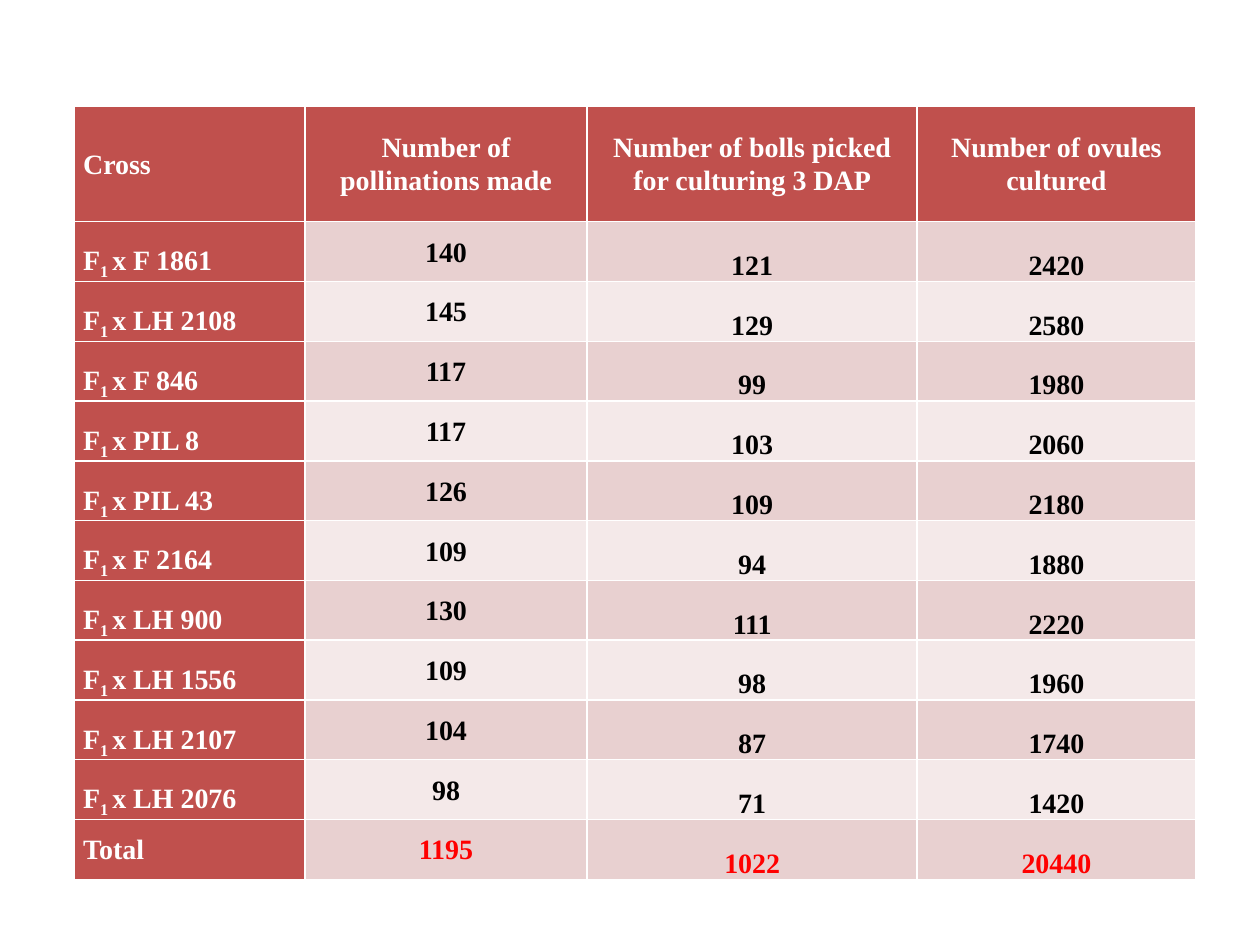
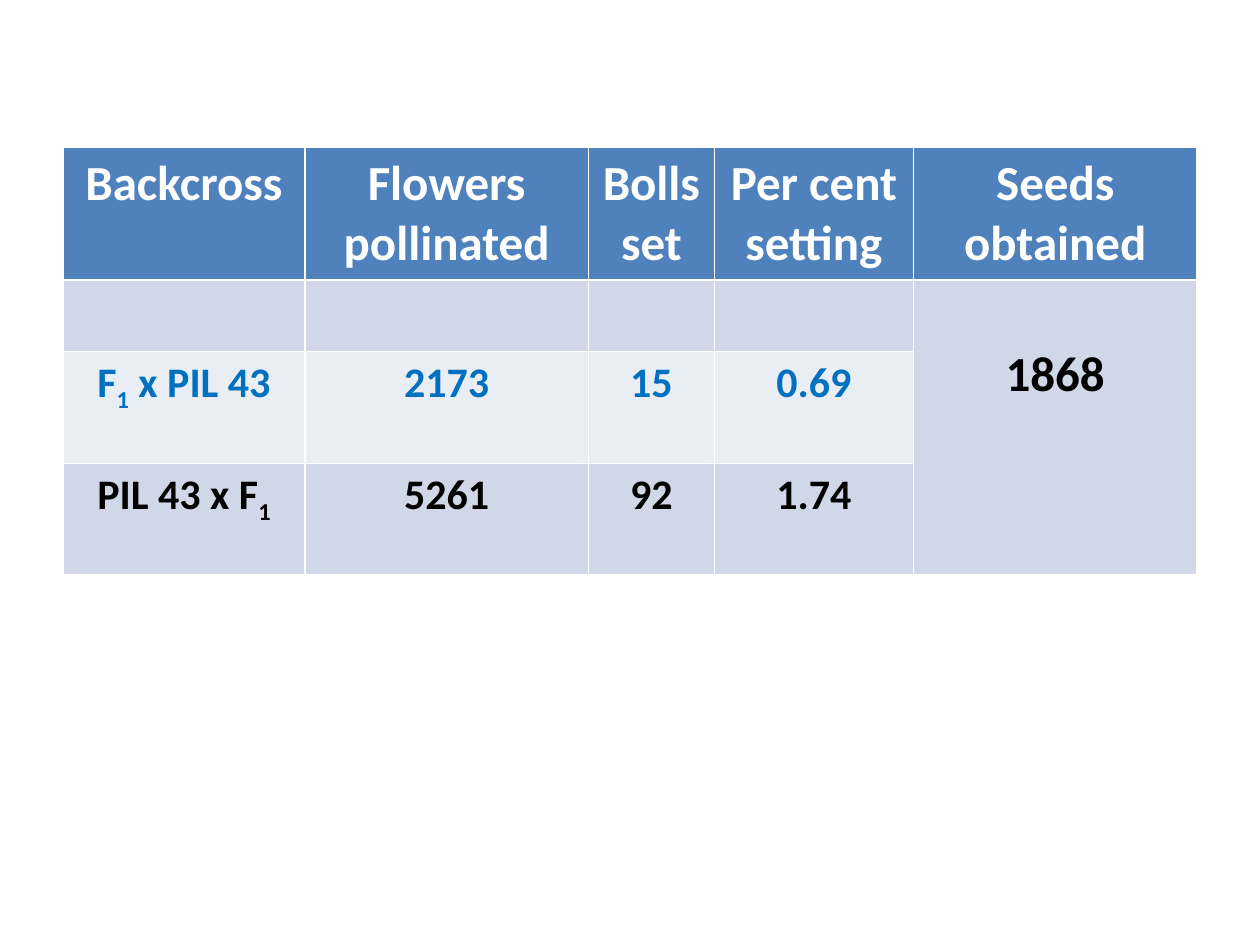
"""Build two slides of cotton crossing results as formatted tables."""
from dataclasses import dataclass
from typing import Any, Callable

from lxml.etree import SubElement
from pptx import Presentation
from pptx.dml.color import RGBColor
from pptx.enum.text import MSO_VERTICAL_ANCHOR as Anchor, PP_PARAGRAPH_ALIGNMENT as Align
from pptx.oxml.ns import qn
from pptx.util import Inches, Pt

COLORS = {
    "white": "FFFFFF", "black": "000000", "red": "FF0000", "sky": "0070C0",
    "brick": "C0504D", "brick_dark": "E8D0D0", "brick_light": "F4E9E9",
    "blue": "4F81BD", "blue_dark": "D0D8E8", "blue_light": "E9EDF4",
}
SUBSCRIPT_MARK = "~"
PLAIN_TABLE = {"first_row": True, "horz_banding": False}


@dataclass(frozen=True)
class CellLook:
    """Text colour, size and placement of one cell."""
    color: str
    size: int
    align: Align = Align.CENTER
    anchor: Anchor = Anchor.TOP
    margin_top: float = 0.05


@dataclass(frozen=True)
class ResultTable:
    """Content, geometry and style of one slide's table."""
    left: float
    top: float
    columns: list[float]
    row_heights: list[float]
    rows: list[list[str]]
    palette: str
    font: str
    look: Callable[[int, int], CellLook]
    side_margin: float = 0.1
    bottom_margin: float = 0.05
    line_spacing: float = 1.0
    accent_first_column: bool = False
    merge: tuple[int, int, int, int] | None = None


def set_all(target: Any, values: dict[str, Any]) -> None:
    """Set every attribute named in values."""
    for name, value in values.items():
        setattr(target, name, value)


def rgb(name: str) -> RGBColor:
    """Look up a named colour."""
    return RGBColor.from_string(COLORS[name])


def add_borders(cell: Any, color: str = "white", width: float = 1) -> None:
    """Rule all four sides of a cell."""
    props = cell._tc.get_or_add_tcPr()
    for position, side in enumerate(("lnL", "lnR", "lnT", "lnB")):
        line = SubElement(props, qn(f"a:{side}"), w=str(Pt(width)))
        fill = SubElement(line, qn("a:solidFill"))
        SubElement(fill, qn("a:srgbClr"), val=COLORS[color])
        props.insert(position, line)


def write_text(cell: Any, text: str, look: CellLook, table: ResultTable) -> None:
    """Write text, lowering the parts between subscript marks."""
    para = cell.text_frame.paragraphs[0]
    set_all(para, {"alignment": look.align, "line_spacing": table.line_spacing})
    for index, part in enumerate(text.split(SUBSCRIPT_MARK)):
        if not part:
            continue
        span = para.add_run()
        span.text = part
        set_all(span.font, {"name": table.font, "size": Pt(look.size), "bold": True})
        span.font.color.rgb = rgb(look.color)
        if index % 2:
            span._r.get_or_add_rPr().set("baseline", "-25000")


def fill_name(table: ResultTable, row: int, col: int) -> str:
    """Choose the accent or the alternating band colour."""
    if row == 0 or (col == 0 and table.accent_first_column):
        return table.palette
    return f"{table.palette}_{'dark' if row % 2 else 'light'}"


def draw_table(deck: Any, table: ResultTable) -> None:
    """Add a blank slide holding the table."""
    page = deck.slides.add_slide(deck.slide_layouts[6])
    grid = page.shapes.add_table(
        len(table.rows), len(table.columns), Inches(table.left), Inches(table.top),
        Inches(sum(table.columns)), Inches(sum(table.row_heights))).table
    set_all(grid, PLAIN_TABLE)
    for column, width in zip(grid.columns, table.columns):
        column.width = Inches(width)
    for band, height in zip(grid.rows, table.row_heights):
        band.height = Inches(height)
    if table.merge:
        first_row, first_col, last_row, last_col = table.merge
        grid.cell(first_row, first_col).merge(grid.cell(last_row, last_col))
    for row, texts in enumerate(table.rows):
        for col, text in enumerate(texts):
            cell, look = grid.cell(row, col), table.look(row, col)
            set_all(cell, {
                "margin_left": Inches(table.side_margin),
                "margin_right": Inches(table.side_margin),
                "margin_top": Inches(look.margin_top),
                "margin_bottom": Inches(table.bottom_margin),
                "vertical_anchor": look.anchor,
            })
            cell.fill.solid()
            cell.fill.fore_color.rgb = rgb(fill_name(table, row, col))
            add_borders(cell)
            if text:
                write_text(cell, text, look, table)


CROSSES = [
    ("F 1861", 140, 121, 2420), ("LH 2108", 145, 129, 2580), ("F 846", 117, 99, 1980),
    ("PIL 8", 117, 103, 2060), ("PIL 43", 126, 109, 2180), ("F 2164", 109, 94, 1880),
    ("LH 900", 130, 111, 2220), ("LH 1556", 109, 98, 1960), ("LH 2107", 104, 87, 1740),
    ("LH 2076", 98, 71, 1420),
]
TOTAL_ROW = len(CROSSES) + 1


def cross_look(row: int, col: int) -> CellLook:
    """Style the cross table: white labels, black counts, red totals."""
    if row == 0 or col == 0:
        color = "white"
    else:
        color = "red" if row == TOTAL_ROW else "black"
    middle = row == 0 or col == 1 or (row == TOTAL_ROW and col == 0)
    return CellLook(color, 16, Align.CENTER if col else Align.LEFT,
                    Anchor.MIDDLE if middle else Anchor.BOTTOM, 0)


def backcross_look(row: int, col: int) -> CellLook:
    """Style the backcross table: blue for the first cross, black for the rest."""
    if row == 0:
        return CellLook("white", 28)
    if col == 4:
        return CellLook("black", 28, margin_top=0.52)
    return CellLook("sky" if row == 2 else "black", 24)


CROSS_TABLE = ResultTable(
    left=0.59, top=0.84, columns=[1.83, 2.24, 2.62, 2.21],
    row_heights=[0.92] + [5.22 / TOTAL_ROW] * TOTAL_ROW,
    rows=[
        ["Cross", "Number of pollinations made",
         "Number of bolls picked for culturing 3 DAP", "Number of ovules cultured"],
        *[[f"F~1 ~x {parent}", *map(str, counts)] for parent, *counts in CROSSES],
        ["Total", *(str(sum(counts)) for counts in list(zip(*CROSSES))[1:])],
    ],
    palette="brick", font="Times New Roman", look=cross_look,
    side_margin=0.07, bottom_margin=0, line_spacing=1.07, accent_first_column=True,
)

BACKCROSS_TABLE = ResultTable(
    left=0.5, top=1.17, columns=[1.92, 2.25, 1, 1.58, 2.25],
    row_heights=[1.05, 0.57, 0.89, 0.88],
    rows=[
        ["Backcross", "Flowers pollinated", "Bolls set", "Per cent setting", "Seeds obtained"],
        ["", "", "", "", "1868"],
        ["F~1~ x PIL 43", "2173", "15", "0.69", ""],
        ["PIL 43 x F~1~", "5261", "92", "1.74", ""],
    ],
    palette="blue", font="Calibri", look=backcross_look, merge=(1, 4, 3, 4),
)


def main() -> None:
    """Build and save the deck."""
    deck = Presentation()
    set_all(deck, {"slide_width": Inches(10), "slide_height": Inches(7.5)})
    for table in (CROSS_TABLE, BACKCROSS_TABLE):
        draw_table(deck, table)
    deck.save("out.pptx")


if __name__ == "__main__":
    main()
